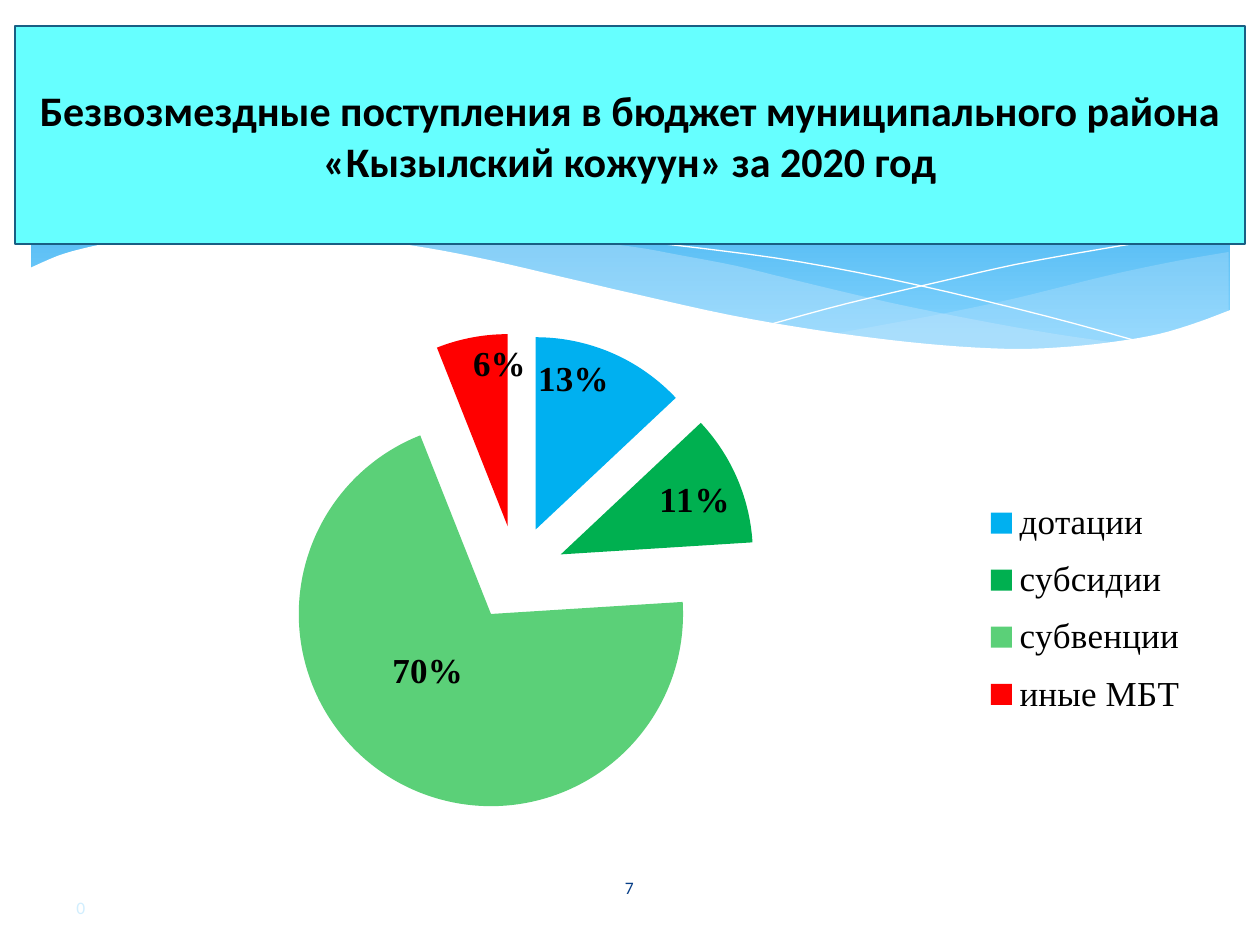
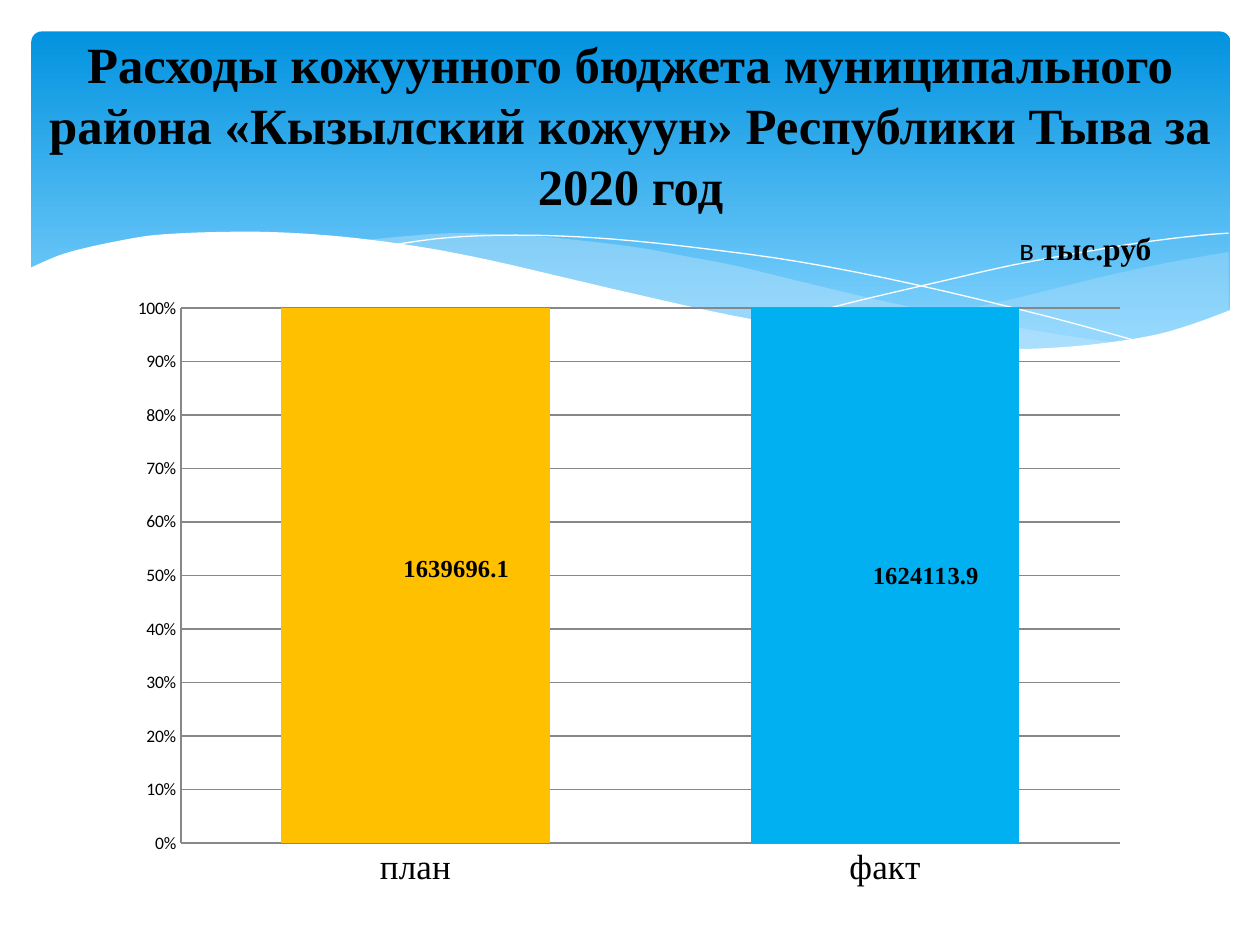
from dataclasses import dataclass

from lxml import etree
from pptx import Presentation
from pptx.chart.data import CategoryChartData
from pptx.dml.color import RGBColor
from pptx.enum.chart import XL_CHART_TYPE as ChartType
from pptx.enum.chart import XL_LABEL_POSITION as LabelPosition
from pptx.enum.chart import XL_LEGEND_POSITION as LegendPosition
from pptx.enum.chart import XL_TICK_MARK as TickMark
from pptx.enum.shapes import MSO_SHAPE as Shape
from pptx.enum.text import MSO_ANCHOR as Anchor
from pptx.enum.text import MSO_AUTO_SIZE as AutoSize
from pptx.enum.text import PP_ALIGN as Align
from pptx.oxml.ns import qn
from pptx.util import Pt


@dataclass(frozen=True)
class Theme:
    sans: str = "Calibri"
    serif: str = "Times New Roman"
    black: str = "000000"
    white: str = "FFFFFF"
    band_top: str = "0293E0"
    band_bottom: str = "83D3FE"
    wave: str = "C6E7FC"
    page_number: str = "073E87"
    faint: str = "D1EEFE"
    panel: str = "66FFFF"
    panel_edge: str = "195F84"
    grid: str = "878787"
    blue: str = "00B0F0"
    green: str = "00B050"
    light_green: str = "5BD078"
    red: str = "FF0000"
    amber: str = "FFC000"
    small: int = 10
    value: int = 14
    unit: int = 18
    legend: int = 20
    panel_title: int = 24
    title: int = 29


THEME = Theme()

# Knots in points; each outline is a list of smooth edges.
RIGHT_WAVE = [
    [(702, 144), (673, 149), (641.5, 155.5), (620, 160.6), (579.6, 170.6),
     (542, 178.6), (508, 185), (476, 190.8)],
    [(476, 190.8), (507.6, 195), (536.4, 198), (562, 199.4), (586, 200.2),
     (607.7, 199.4), (628, 197.3), (646, 194.4), (663, 190.8),
     (678, 186.5), (702, 177.8)],
]
MIDDLE_WAVE = [
    [(643, 196.6), (602.6, 190.8), (558, 182.9), (508, 172.8), (453, 159.8),
     (420.5, 151.9), (389.5, 146), (361.4, 141), (318, 136), (287, 133.9),
     (260, 133.2), (236, 134.6), (206, 137.5)],
    [(206, 137.5), (232.6, 141), (260.6, 146), (291, 151.9), (323, 159.8),
     (381.6, 172.8), (432.7, 183.6), (478.8, 191.5), (519.8, 197.3),
     (556.6, 199.4), (589, 200.2), (617, 199.4), (643, 196.6)],
]
FALLING_LINE = [
    [(222.5, 140.4), (236, 138.2), (254, 136), (278.6, 134.6), (311.8, 134.6),
     (352, 136.8), (400, 141.8), (458, 149.8), (523.4, 162.7), (598, 180.7),
     (653, 195.8)],
]
RISING_LINE = [
    [(441.4, 185), (483.8, 173.5), (538.6, 160.6), (580, 151.2), (623.5, 143.3),
     (655, 138.2), (684.7, 134.6), (702, 133.2)],
]
WHITE_COVER = [
    [(703.4, 177), (684, 184.3), (662.4, 190.8), (638.6, 195), (612, 198),
     (582.5, 199.4), (548, 198), (509.8, 194.4), (466.6, 188.6), (417, 180),
     (362, 167.8), (321.8, 158.4), (281.5, 149), (244.8, 141.8), (210, 136.8),
     (180, 133.9), (152, 132.5), (127.4, 132.5), (105, 133.2), (85.7, 134.6),
     (68.4, 137.5), (48.2, 141.8), (33, 146.2), (16.6, 153.4)],
    [(16.6, 237), (703.4, 237)],
]


def rgb(color):
    return RGBColor.from_string(color)


def add_xml(parent, tag, **attributes):
    return etree.SubElement(parent, qn(tag), attributes)


def smooth(knots, steps=4):
    """Sample a Catmull-Rom curve through the knots."""
    padded = [knots[0], *knots, knots[-1]]
    points = [knots[0]]
    for a, b, c, d in zip(padded, padded[1:], padded[2:], padded[3:]):
        for step in range(1, steps + 1):
            t = step / steps
            points.append(tuple(
                (2 * q + (r - p) * t + (2 * p - 5 * q + 4 * r - s) * t ** 2
                 + (3 * q - p - 3 * r + s) * t ** 3) / 2
                for p, q, r, s in zip(a, b, c, d)))
    return points


def chart_layout(*, inner=False, **places):
    """Manual chart layout; x, y, w and h are fractions of the chart."""
    layout = etree.Element(qn("c:layout"))
    manual = add_xml(layout, "c:manualLayout")
    if inner:
        add_xml(manual, "c:layoutTarget", val="inner")
    if "w" in places:
        for side in "xy":
            add_xml(manual, f"c:{side}Mode", val="edge")
    for name, value in places.items():
        add_xml(manual, f"c:{name}", val=str(value))
    return layout


def place_plot(chart, **places):
    area = chart._chartSpace.chart.plotArea
    for old in area.findall(qn("c:layout")):
        area.remove(old)
    area.insert(0, chart_layout(inner=True, **places))


class Deck:
    def __init__(self, theme):
        self.theme = theme
        self.deck = Presentation()
        self.deck.slide_width, self.deck.slide_height = Pt(720), Pt(540)
        self.page = None

    def new_page(self):
        self.page = self.deck.slides.add_slide(self.deck.slide_layouts[5])
        self.band()

    def style(self, font, size, face=None, color=None, bold=False):
        formats = {"size": Pt(size), "name": face or self.theme.sans, "bold": bold}
        for name, value in formats.items():
            setattr(font, name, value)
        font.color.rgb = rgb(color or self.theme.black)

    def band(self):
        theme = self.theme
        band = self.page.shapes.add_shape(
            Shape.ROUNDED_RECTANGLE, Pt(18), Pt(18), Pt(685), Pt(194.4))
        band.adjustments[0] = 0.03
        band.shadow.inherit = False
        band.line.fill.background()
        band.fill.gradient()
        band.fill.gradient_angle = 270
        stops = ((theme.band_top, 0), (theme.band_bottom, 0.9))
        for stop, (color, position) in zip(band.fill.gradient_stops, stops):
            stop.color.rgb, stop.position = rgb(color), position
        group = self.page.shapes.add_group_shape()
        self.outline(group, RIGHT_WAVE, fill=theme.wave, opacity=29)
        self.outline(group, MIDDLE_WAVE, fill=theme.wave, opacity=40)
        for edges in (FALLING_LINE, RISING_LINE):
            self.outline(group, edges)
        self.outline(group, WHITE_COVER, fill=theme.white)

    def outline(self, group, edges, fill=None, opacity=100):
        """Closed filled shape, or an open white hairline without a fill."""
        points = [(Pt(x), Pt(y)) for edge in edges for x, y in smooth(edge)]
        builder = group.shapes.build_freeform(*points[0])
        builder.add_line_segments(points[1:], close=fill is not None)
        shape = builder.convert_to_shape()
        shape.shadow.inherit = False
        if fill is None:
            shape.fill.background()
            shape.line.color.rgb = rgb(self.theme.white)
            shape.line.width = Pt(0)
            return
        shape.line.fill.background()
        shape.fill.solid()
        shape.fill.fore_color.rgb = rgb(fill)
        if opacity < 100:
            color = shape._element.spPr.find(qn("a:solidFill"))[0]
            add_xml(color, "a:alpha", val=str(opacity * 1000))

    def fill_text(self, box, spans, align, anchor, wrap=True):
        """Fill one paragraph with (text, style) spans."""
        frame = box.text_frame
        formats = {"word_wrap": wrap, "auto_size": AutoSize.NONE,
                   "vertical_anchor": anchor}
        for name, value in formats.items():
            setattr(frame, name, value)
        para = frame.paragraphs[0]
        para.alignment = align
        for text, style in spans:
            span = para.add_run()
            span.text = text
            self.style(span.font, **style)

    def title(self, text, place, anchor, **style):
        box = self.page.shapes.title
        box.left, box.top, box.width, box.height = map(Pt, place)
        self.page.shapes._spTree.append(box._element)
        self.fill_text(box, [(text, {"bold": True, **style})], Align.CENTER, anchor)
        return box

    def label(self, spans, place, align=Align.LEFT, anchor=Anchor.MIDDLE, wrap=True):
        box = self.page.shapes.add_textbox(*map(Pt, place))
        self.fill_text(box, spans, align, anchor, wrap)

    def chart(self, kind, place, values, colors):
        data = CategoryChartData()
        data.categories = list(values)
        data.add_series("Series 1", list(values.values()))
        chart = self.page.shapes.add_chart(kind, *map(Pt, place), data).chart
        chart.has_title = chart.has_legend = False
        self.style(chart.font, self.theme.small)
        series = chart.plots[0].series[0]
        for index, color in enumerate(colors):
            fill = series.points[index].format.fill
            fill.solid()
            fill.fore_color.rgb = rgb(color)
        return chart

    def data_labels(self, chart, size, percent=False):
        labels = chart.plots[0].series[0].data_labels
        labels.show_percentage, labels.show_value = percent, not percent
        self.style(labels.font, size, self.theme.serif, bold=True)
        return labels

    def nudge_label(self, chart, index, size, x, y, percent=False):
        label = chart.plots[0].series[0].points[index].data_label
        self.style(label.font, size, self.theme.serif, bold=True)
        label.position = LabelPosition.CENTER
        node = label._get_or_add_dLbl()
        node.find(qn("c:showVal")).set("val", str(int(not percent)))
        node.find(qn("c:showPercent")).set("val", str(int(percent)))
        node.find(qn("c:idx")).addnext(chart_layout(x=x, y=y))


def income_page(deck):
    theme = deck.theme
    deck.new_page()
    deck.label([("7", {"size": theme.small, "color": theme.page_number})],
               (314, 492.5, 91.4, 28.8), Align.CENTER)
    deck.label([("0", {"size": theme.small, "color": theme.faint})],
               (36.5, 504, 60, 28.8))
    panel = deck.title(
        "Безвозмездные поступления в бюджет муниципального района "
        "«Кызылский кожуун» за 2020 год",
        (8.6, 15, 702.8, 124.6), Anchor.MIDDLE, size=theme.panel_title)
    panel.fill.solid()
    panel.fill.fore_color.rgb = rgb(theme.panel)
    panel.line.color.rgb = rgb(theme.panel_edge)
    panel.line.width = Pt(1.25)

    chart = deck.chart(
        ChartType.PIE, (36.7, 157, 663, 334.8),
        {"дотации": 13, "субсидии": 11, "субвенции": 70, "иные МБТ": 6},
        (theme.blue, theme.green, theme.light_green, theme.red))
    place_plot(chart, x=0.18, y=0.1, w=0.42, h=0.82)
    chart.plots[0].vary_by_categories = True
    explosion = etree.Element(qn("c:explosion"), val="25")
    chart.plots[0].series[0]._element.find(qn("c:tx")).addnext(explosion)
    labels = deck.data_labels(chart, theme.legend, percent=True)
    labels.number_format, labels.number_format_is_linked = "0%", False
    labels.position = LabelPosition.INSIDE_END
    deck.nudge_label(chart, 2, theme.legend, -0.01, -0.04, percent=True)
    chart.has_legend = True
    legend = chart.legend
    legend.position, legend.include_in_layout = LegendPosition.RIGHT, False
    deck.style(legend.font, theme.legend, theme.serif)
    legend._element.find(qn("c:legendPos")).addnext(
        chart_layout(x=0.78, y=0.36, w=0.2, h=0.42))


def spending_page(deck):
    theme = deck.theme
    deck.new_page()
    deck.title(
        "Расходы кожуунного бюджета муниципального района "
        "«Кызылский кожуун» Республики Тыва за 2020 год",
        (14.4, 15, 692, 113), Anchor.TOP, size=theme.title, face=theme.serif)

    chart = deck.chart(
        ChartType.COLUMN_STACKED_100, (68.4, 162, 583.2, 351.4),
        {"план": 1639696.1, "факт": 1624113.9}, (theme.amber, theme.blue))
    place_plot(chart, x=0.06, y=0.04, w=0.92, h=0.87)
    plot = chart.plots[0]
    plot.vary_by_categories = False
    plot.gap_width, plot.overlap = 75, 100
    deck.data_labels(chart, theme.value)
    for index, y in enumerate((-0.01, 0)):
        deck.nudge_label(chart, index, theme.value, 0.04, y)
    values, categories = chart.value_axis, chart.category_axis
    values.has_major_gridlines = True
    values.major_unit = 0.1
    values.tick_labels.number_format = "0%"
    values.tick_labels.number_format_is_linked = False
    deck.style(values.tick_labels.font, theme.small)
    deck.style(categories.tick_labels.font, theme.legend, theme.serif)
    for axis in (values, categories):
        axis.major_tick_mark = axis.minor_tick_mark = TickMark.NONE
    for item in (values, categories, values.major_gridlines):
        item.format.line.color.rgb = rgb(theme.grid)
        item.format.line.width = Pt(0.75)

    deck.label([("в ", {"size": theme.unit}),
                ("тыс.руб", {"size": theme.unit, "face": theme.serif, "bold": True})],
               (575.3, 127.4, 90.7, 28.8), anchor=Anchor.TOP, wrap=False)


def main():
    deck = Deck(THEME)
    income_page(deck)
    spending_page(deck)
    deck.deck.save("out.pptx")


if __name__ == "__main__":
    main()
